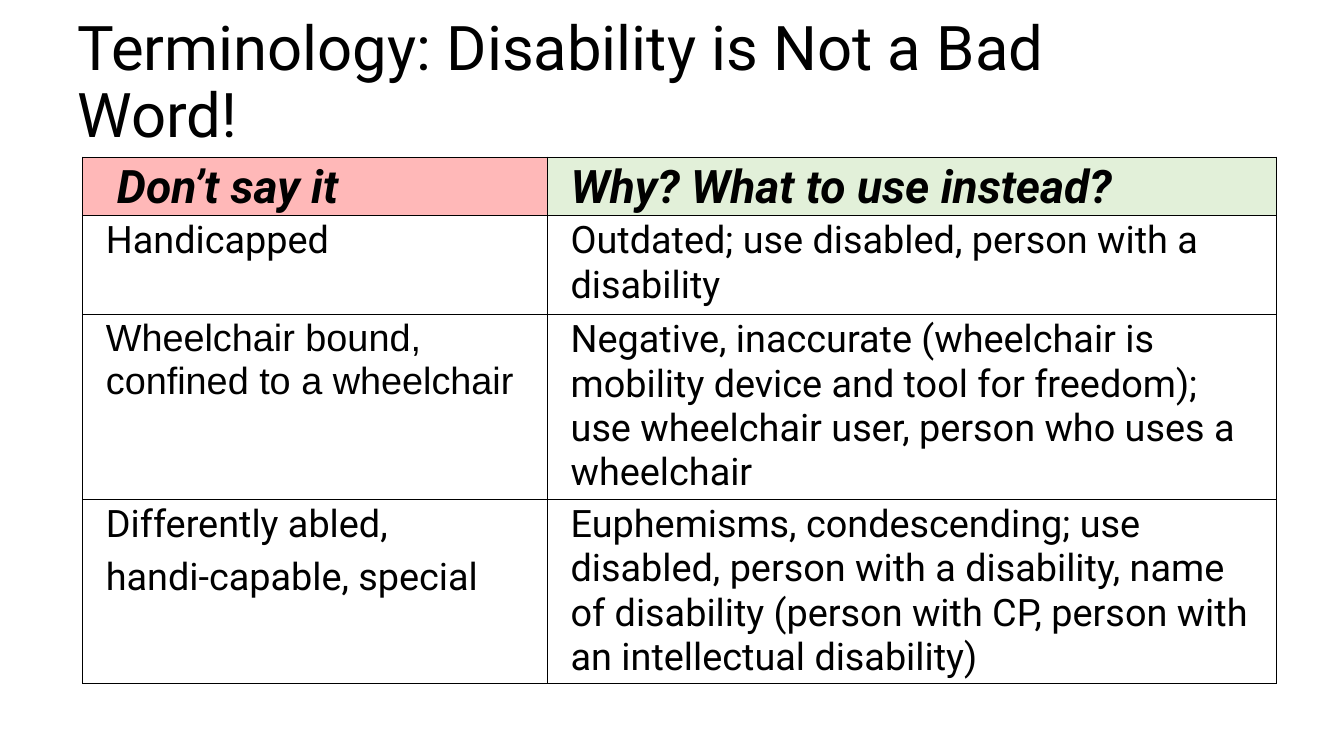
from pptx import Presentation
from pptx.dml.color import RGBColor
from pptx.enum.text import MSO_ANCHOR
from pptx.oxml.ns import qn
from pptx.util import Inches, Pt
from lxml.etree import SubElement

# Content
TITLE = "Terminology: Disability is Not a Bad Word!"
HEADINGS = ["Don’t say it", "Why? What to use instead?"]
TERMS = [
    (["Handicapped"],
     ["Outdated; use disabled, person with a disability"]),
    (["Wheelchair bound, confined to a wheelchair"],
     ["Negative, inaccurate (wheelchair is mobility device and tool for freedom); "
      "use wheelchair user, person who uses a wheelchair"]),
    (["Differently abled,", "handi-capable, special"],
     ["Euphemisms, condescending; use disabled, person with a disability, "
      "name of disability (person with CP, person with an intellectual disability)"]),
]
ARIAL_CELL = (2, 0)

# Look
BLACK = RGBColor(0x00, 0x00, 0x00)
PINK = RGBColor(0xFF, 0xB8, 0xB8)
GREEN = RGBColor(0xE2, 0xF0, 0xD9)
HEADING_FILLS = [PINK, GREEN]
COLUMN_WIDTHS = [4.61, 7.23]
ROW_HEIGHTS = [0.56, 0.98, 1.79, 1.79]
CELL_INSET = 0.23
HEADING_INDENT = 0.11


def write_text(frame, lines, size, font="Roboto", bold=False, italic=False,
               space_after=None, line_spacing=None):
    frame.word_wrap = True
    for index, line in enumerate(lines):
        para = frame.paragraphs[0] if index == 0 else frame.add_paragraph()
        para.space_after = space_after
        para.line_spacing = line_spacing
        span = para.add_run()
        span.text = line
        span.font.name = font
        span.font.size = Pt(size)
        span.font.bold = bold
        span.font.italic = italic
        span.font.color.rgb = BLACK


def format_cell(cell, fill=None, indent=0):
    cell.margin_left = Inches(CELL_INSET + indent)
    cell.margin_right = Inches(CELL_INSET)
    cell.margin_top = Inches(0.03)
    cell.margin_bottom = 0
    # Borders come before the fill in the cell properties
    properties = cell._tc.get_or_add_tcPr()
    for side in ("a:lnL", "a:lnR", "a:lnT", "a:lnB"):
        border = SubElement(properties, qn(side), w=str(Pt(1)))
        solid = SubElement(border, qn("a:solidFill"))
        SubElement(solid, qn("a:srgbClr"), val=str(BLACK))
    if fill is None:
        cell.fill.background()
    else:
        cell.fill.solid()
        cell.fill.fore_color.rgb = fill


deck = Presentation()
deck.slide_width, deck.slide_height = Inches(13.33), Inches(7.5)
page = deck.slides.add_slide(deck.slide_layouts[6])

# Title
box = page.shapes.add_textbox(Inches(0.67), Inches(0.11), Inches(11.5), Inches(1.45))
box.text_frame.vertical_anchor = MSO_ANCHOR.MIDDLE
write_text(box.text_frame, [TITLE], 44, line_spacing=0.9)

# Table grid
table = page.shapes.add_table(
    len(ROW_HEIGHTS), len(COLUMN_WIDTHS), Inches(0.82), Inches(1.56),
    Inches(sum(COLUMN_WIDTHS)), Inches(sum(ROW_HEIGHTS))).table
table.first_row = False
table.horz_banding = False
for column, width in zip(table.columns, COLUMN_WIDTHS):
    column.width = Inches(width)
for row, height in zip(table.rows, ROW_HEIGHTS):
    row.height = Inches(height)

# Heading row
for c, (heading, fill) in enumerate(zip(HEADINGS, HEADING_FILLS)):
    cell = table.cell(0, c)
    format_cell(cell, fill, indent=HEADING_INDENT if c == 0 else 0)
    write_text(cell.text_frame, [heading], 33, bold=True, italic=True, space_after=Pt(6))

# Term rows
for r, term in enumerate(TERMS, start=1):
    for c, lines in enumerate(term):
        cell = table.cell(r, c)
        format_cell(cell)
        font = "Arial" if (r, c) == ARIAL_CELL else "Roboto"
        write_text(cell.text_frame, lines, 27, font=font, space_after=Pt(6))

deck.save("out.pptx")
